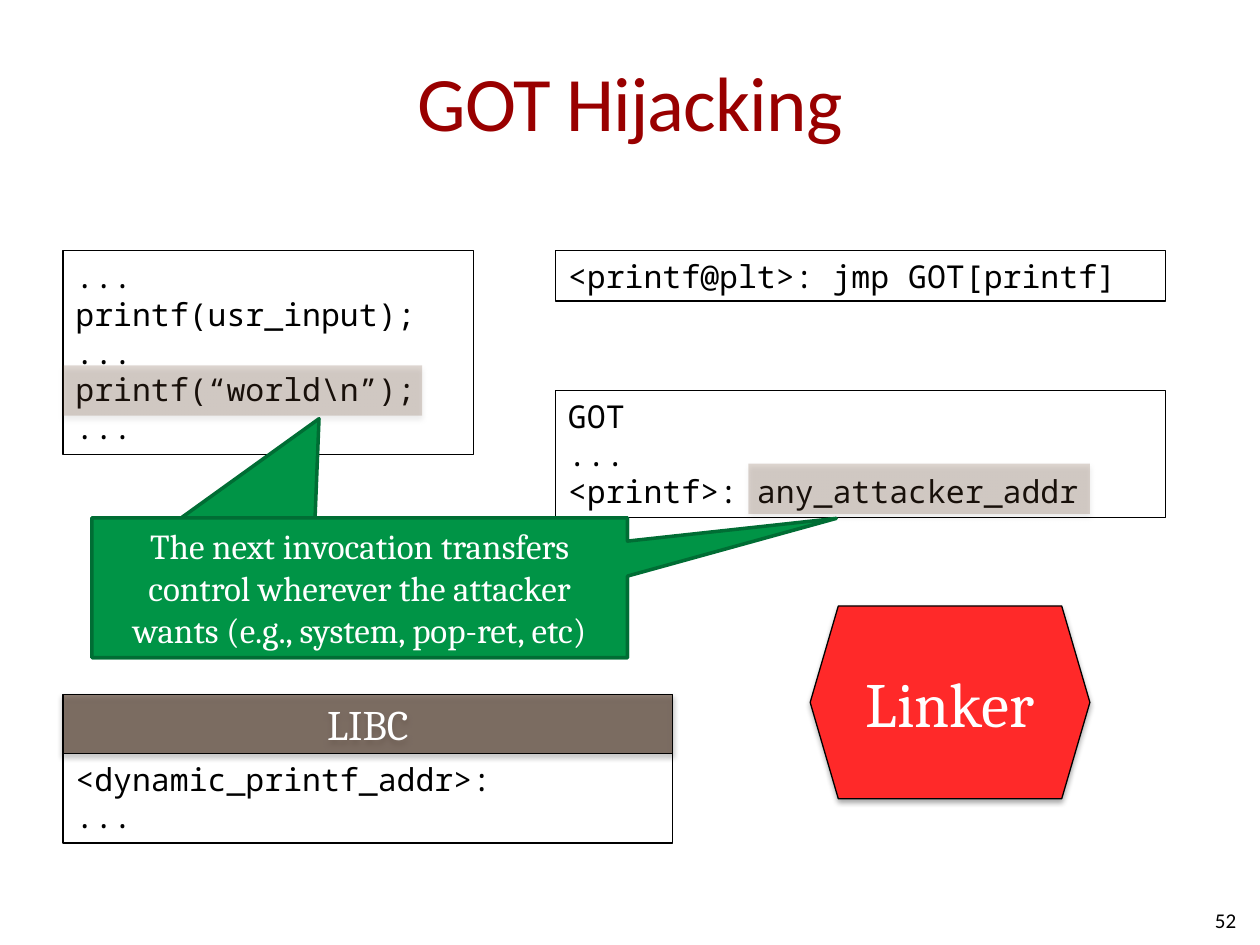
from lxml import etree
from pptx import Presentation
from pptx.dml.color import RGBColor
from pptx.enum.shapes import MSO_SHAPE as Shape
from pptx.enum.text import MSO_ANCHOR as Anchor, MSO_AUTO_SIZE as AutoSize, PP_ALIGN as Align
from pptx.oxml.ns import qn
from pptx.util import Inches, Pt

BLACK = RGBColor(0x00, 0x00, 0x00)
WHITE = RGBColor(0xFF, 0xFF, 0xFF)
TITLE_RED = RGBColor(0x99, 0x00, 0x00)
HIGHLIGHT_BROWN = RGBColor(0x6E, 0x4A, 0x31)
LIBC_BROWN = RGBColor(0x4A, 0x31, 0x20)
LINKER_RED = RGBColor(0xFF, 0x29, 0x29)
CALLOUT_GREEN = RGBColor(0x00, 0x94, 0x46)
CALLOUT_EDGE = RGBColor(0x00, 0x6D, 0x34)

LEFT, RIGHT = 0.5, 4.41
WIDE = 4.84


def write(shape, text, font="Cambria", size=18, color=WHITE, align=Align.CENTER,
          anchor=Anchor.MIDDLE, grow=False, spacing=None):
    """Fill a shape with text, one paragraph per line."""
    frame = shape.text_frame
    frame.word_wrap = True
    frame.vertical_anchor = anchor
    frame.auto_size = AutoSize.SHAPE_TO_FIT_TEXT if grow else AutoSize.NONE
    for number, line in enumerate(text.split("\n")):
        paragraph = frame.add_paragraph() if number else frame.paragraphs[0]
        paragraph.alignment = align
        run = paragraph.add_run()
        run.text = line
        run.font.name = font
        run.font.size = Pt(size)
        run.font.color.rgb = color
        if spacing is not None:
            run.font._element.set("spc", str(round(spacing * 100)))
    return frame


def add_shadow(shape):
    """Drop a soft shadow straight down."""
    effects = shape._element.spPr.find(qn("a:effectLst"))
    shadow = etree.SubElement(effects, qn("a:outerShdw"), blurRad=str(Pt(3.1)),
                              dist=str(Pt(1.8)), dir="5400000", rotWithShape="0")
    color = etree.SubElement(shadow, qn("a:srgbClr"), val=str(BLACK))
    etree.SubElement(color, qn("a:alpha"), val="35000")


def draw(shapes, kind, box, fill=None, opacity=100, line=BLACK, weight=0.75, shadow=False):
    shape = shapes.add_shape(kind, *map(Inches, box))
    shape.shadow.inherit = False
    if fill is None:
        shape.fill.background()
    else:
        shape.fill.solid()
        shape.fill.fore_color.rgb = fill
        if opacity < 100:
            color = shape._element.spPr.find(qn("a:solidFill"))[0]
            etree.SubElement(color, qn("a:alpha"), val=str(opacity * 1000))
    if line is None:
        shape.line.fill.background()
    else:
        shape.line.color.rgb = line
        shape.line.width = Pt(weight)
    if shadow:
        add_shadow(shape)
    return shape


def add_title(slide, box):
    title = slide.shapes.add_textbox(*map(Inches, box))
    frame = write(title, "GOT Hijacking", font="Calibri", size=44, color=TITLE_RED, spacing=-0.5)
    frame.margin_left = frame.margin_right = 0


def add_code(slide, box, code):
    listing = draw(slide.shapes, Shape.RECTANGLE, box)
    write(listing, code, font="Noto Sans Mono", color=BLACK, align=Align.LEFT,
          anchor=Anchor.TOP, grow=True)


def add_highlight(slide, box):
    draw(slide.shapes, Shape.RECTANGLE, box, HIGHLIGHT_BROWN, 22, line=None, shadow=True)


def add_libc(slide, box):
    """Header bar with the library code right below it."""
    left, top, width, height = box
    header = 0.47
    add_code(slide, (left, top + header, width, height - header),
             "<dynamic_printf_addr>:\n...")
    bar = draw(slide.shapes, Shape.RECTANGLE, (left, top, width, header),
               LIBC_BROWN, 61, shadow=True)
    write(bar, "LIBC", size=24)


def add_linker(slide, box):
    linker = draw(slide.shapes, Shape.HEXAGON, box, LINKER_RED, shadow=True)
    linker.adjustments[0] = 0.146
    write(linker, "Linker", size=36)


def add_callout(slide, box, tips, text):
    """One callout per tip, stacked; the top one carries the text."""
    group = slide.shapes.add_group_shape()
    for tip in tips:
        callout = draw(group.shapes, Shape.RECTANGULAR_CALLOUT, box, CALLOUT_GREEN,
                       line=CALLOUT_EDGE, weight=2)
        callout.adjustments[0], callout.adjustments[1] = tip
    write(callout, text, size=20)


def add_page_number(slide, box):
    number = slide.shapes.add_textbox(*map(Inches, box))
    write(number, "52", font="Calibri", size=12, color=BLACK, align=Align.RIGHT)


def main():
    deck = Presentation()
    deck.slide_width, deck.slide_height = Inches(10), Inches(7.5)
    slide = deck.slides.add_slide(deck.slide_layouts[6])

    add_title(slide, (LEFT, 0.17, 9, 1.25))
    # Program, PLT and GOT
    add_code(slide, (LEFT, 1.99, 3.26, 1.62),
             "...\nprintf(usr_input);\n...\nprintf(“world\\n”);\n...")
    add_code(slide, (RIGHT, 1.99, WIDE, 0.4), "<printf@plt>: jmp GOT[printf]")
    add_code(slide, (RIGHT, 3.1, WIDE, 1.01), "GOT\n...\n<printf>: any_attacker_addr")
    add_highlight(slide, (LEFT, 2.9, 2.85, 0.4))
    # Library and linker
    add_libc(slide, (LEFT, 5.51, WIDE, 1.18))
    add_linker(slide, (6.43, 4.81, 2.22, 1.53))
    # Hijacked address and its explanation
    add_highlight(slide, (5.94, 3.68, 2.71, 0.4))
    add_callout(slide, (0.73, 4.11, 4.25, 1.11), [(-0.076, -1.209), (0.89, -0.496)],
                "The next invocation transfers control wherever the attacker wants "
                "(e.g., system, pop-ret, etc)")
    add_page_number(slide, (7.58, 7.1, 2.33, 0.4))

    deck.save("out.pptx")


if __name__ == "__main__":
    main()
